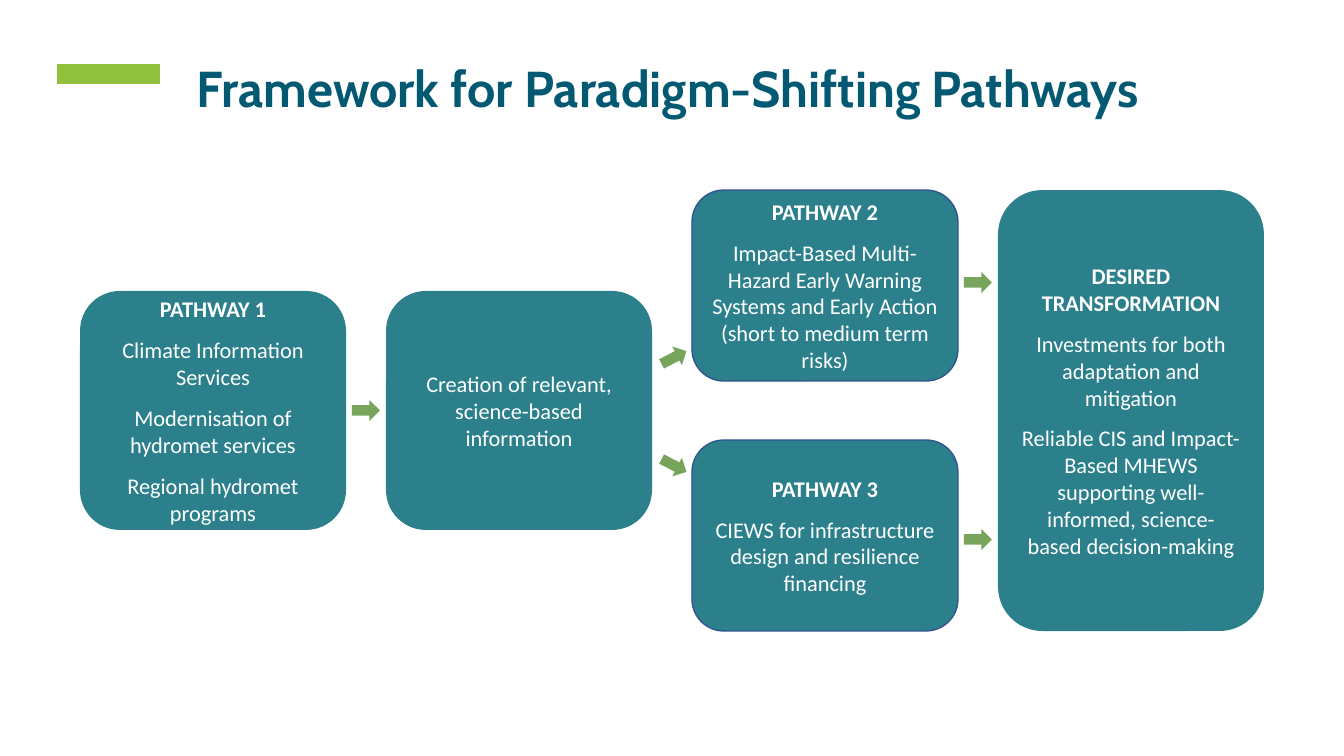
from dataclasses import dataclass

from lxml import etree
from pptx import Presentation
from pptx import util as u
from pptx.dml.color import RGBColor
from pptx.enum import shapes, text
from pptx.oxml.ns import qn

SLIDE_W, SLIDE_H = 1344, 756
EMU_PER_PX = u.Inches(7.5) / SLIDE_H


@dataclass(frozen=True)
class Theme:
    accent: str = "92C13F"
    title: str = "045972"
    box: str = "2B808B"
    outline: str = "325491"
    arrow: str = "77A55C"
    white: str = "FFFFFF"
    title_font: str = "Cabin"
    body_font: str = "Calibri"
    title_size: int = 36
    body_size: int = 16


THEME = Theme()

# Four columns of equal width with equal gaps
LEFT, BOX_W, GAP = 80, 266, 40
ARROW_W, ARROW_H = 28, 21


def px(*lengths):
    return [u.Emu(round(n * EMU_PER_PX)) for n in lengths]


def column_x(col):
    return LEFT + col * (BOX_W + GAP)


def style_run(r, font, size, color, bold):
    r.font.name = font
    r.font.size = u.Pt(size)
    r.font.color.rgb = RGBColor.from_string(color)
    r.font.bold = bold


def add_filled(slide, preset, box, fill, outline=None):
    sp = slide.shapes.add_shape(preset, *px(*box))
    sp.shadow.inherit = False
    sp.fill.solid()
    sp.fill.fore_color.rgb = RGBColor.from_string(fill)
    if outline:
        sp.line.color.rgb = RGBColor.from_string(outline)
        sp.line.width = u.Pt(1)
    else:
        sp.line.fill.background()
    return sp


def add_accent_bar(slide):
    line = slide.shapes.add_connector(
        shapes.MSO_CONNECTOR.STRAIGHT, *px(57, 74, 160, 74))
    line.line.color.rgb = RGBColor.from_string(THEME.accent)
    line.line.width = u.Pt(14)
    etree.SubElement(line._element.spPr, qn("a:effectLst"))


def add_title(slide, title):
    tf = slide.shapes.add_textbox(*px(187, 18, 1135, 146)).text_frame
    tf.word_wrap = True
    tf.vertical_anchor = text.MSO_ANCHOR.MIDDLE
    tf.text = title
    p = tf.paragraphs[0]
    p.line_spacing = 0.9
    style_run(p.runs[0], THEME.title_font, THEME.title_size, THEME.title, True)


def add_box(slide, col, top, height, heading, items, outline=None):
    sp = add_filled(slide, shapes.MSO_SHAPE.ROUNDED_RECTANGLE,
                    (column_x(col), top, BOX_W, height), THEME.box, outline)
    tf = sp.text_frame
    tf.word_wrap = True
    tf.vertical_anchor = text.MSO_ANCHOR.MIDDLE
    lines = [heading, *items] if heading else items
    tf.text = "\n".join(lines)
    for p in tf.paragraphs:
        p.alignment = text.PP_ALIGN.CENTER
        p.space_after = u.Pt(10 if heading else 0)
        for r in p.runs:
            style_run(r, THEME.body_font, THEME.body_size, THEME.white, r.text == heading)


def add_arrow(slide, left, top, rotation=0):
    sp = add_filled(slide, shapes.MSO_SHAPE.RIGHT_ARROW,
                    (left, top, ARROW_W, ARROW_H), THEME.arrow)
    sp.rotation = rotation


def main():
    prs = Presentation()
    prs.slide_width, prs.slide_height = px(SLIDE_W, SLIDE_H)
    slide = prs.slides.add_slide(prs.slide_layouts[6])

    # Heading
    add_accent_bar(slide)
    add_title(slide, "Framework for Paradigm-Shifting Pathways")

    # Pathway boxes: column, top, height, heading, items, outline
    boxes = [
        (0, 291, 239, "PATHWAY 1", ["Climate Information Services",
                                    "Modernisation of hydromet services",
                                    "Regional hydromet programs"]),
        (1, 291, 239, None, ["Creation of relevant, science-based information"]),
        (2, 190, 191, "PATHWAY 2",
         ["Impact-Based Multi-Hazard Early Warning Systems and Early Action "
          "(short to medium term risks)"], THEME.outline),
        (2, 440, 191, "PATHWAY 3",
         ["CIEWS for infrastructure design and resilience financing"], THEME.outline),
        (3, 190, 441, "DESIRED TRANSFORMATION",
         ["Investments for both adaptation and mitigation",
          "Reliable CIS and Impact-Based MHEWS supporting well-informed, "
          "science-based decision-making"]),
    ]
    for box in boxes:
        add_box(slide, *box)

    # Arrows between the columns: left, top, rotation
    arrows = [(352, 400, 0), (660, 347, -27.3), (660, 455, 27.3),
              (964, 272, 0), (964, 529, 0)]
    for arrow in arrows:
        add_arrow(slide, *arrow)

    prs.save("out.pptx")


if __name__ == "__main__":
    main()
